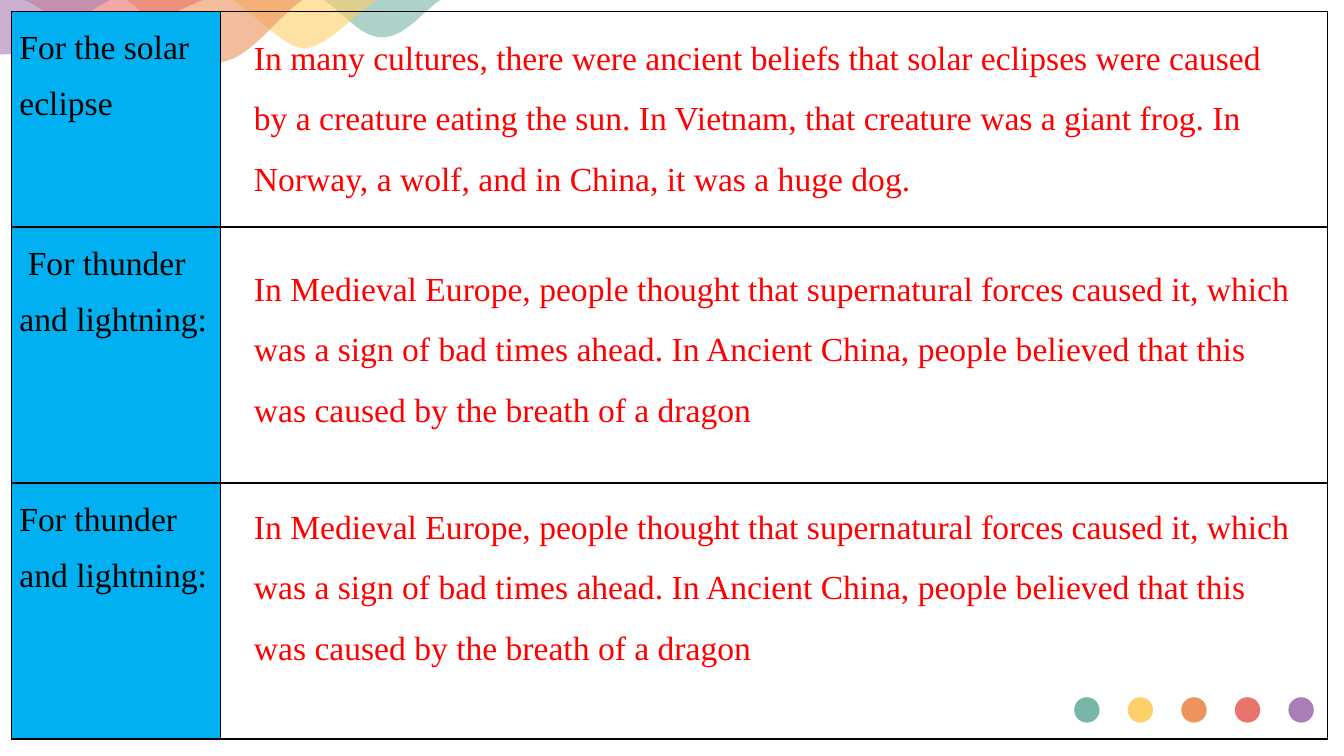
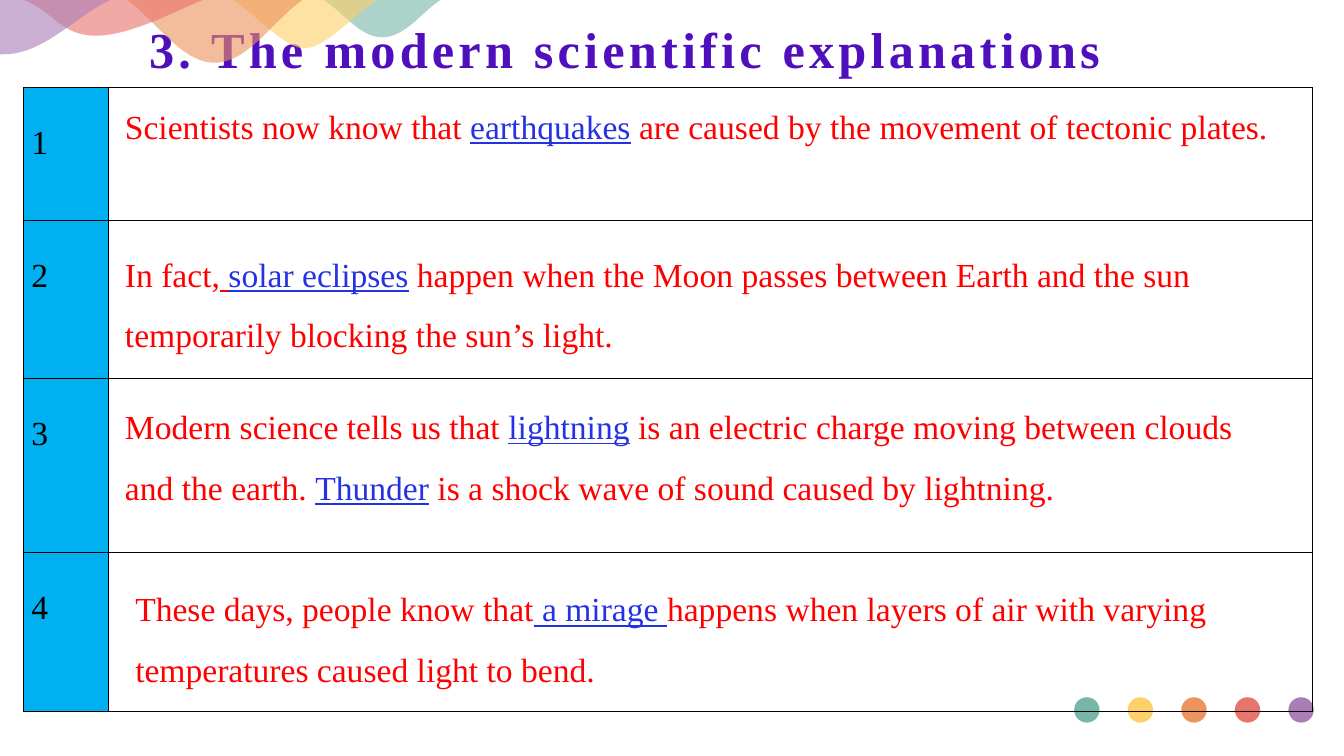
from dataclasses import dataclass

from lxml import etree
from pptx import Presentation
from pptx.dml.color import RGBColor
from pptx.enum.shapes import MSO_SHAPE as Preset
from pptx.enum.text import MSO_ANCHOR as Anchor
from pptx.oxml.ns import qn
from pptx.util import Cm, Pt

TEAL = RGBColor(0x78, 0xB6, 0xA9)
YELLOW = RGBColor(0xFD, 0xD0, 0x69)
ORANGE = RGBColor(0xED, 0x93, 0x5C)
CORAL = RGBColor(0xE9, 0x74, 0x6E)
PURPLE = RGBColor(0xAB, 0x7D, 0xB6)
SKY = RGBColor(0x00, 0xB0, 0xF0)
BLACK = RGBColor(0x00, 0x00, 0x00)
RED = RGBColor(0xFF, 0x00, 0x00)
TERM_BLUE = RGBColor(0x24, 0x32, 0xE4)
TITLE_VIOLET = RGBColor(0x4F, 0x0F, 0xBD)
BORDER = RGBColor(0x08, 0x00, 0x00)

FONT = "Times New Roman"
PALETTE = (TEAL, YELLOW, ORANGE, CORAL, PURPLE)
# Each wave: depth, then x of its anchors and handles from right to left, in cm.
WAVES = (
    (0.94, (11.1, 10.62, 10.21, 9.63, 9.07, 8.66, 8.15)),
    (1.22, (9.5, 8.89, 8.18, 7.67, 7.19, 6.48, 5.87)),
    (1.58, (7.62, 6.88, 6.25, 5.41, 4.57, 3.94, 3.2)),
    (0.9, (5.11, 4.37, 3.28, 2.41, 1.55, 1.35, 0.61)),
    (1.37, (2.77, 1.85, 1.09, 0.08, -0.97, -1.73, -2.64)),
)

BELIEF_LABELS = ("For the solar eclipse", " For thunder and lightning:",
                 "For thunder and lightning:")
ECLIPSE_BELIEF = (
    "In many cultures, there were ancient beliefs that solar eclipses were "
    "caused by a creature eating the sun. In Vietnam, that creature was a "
    "giant frog. In Norway, a wolf, and in China, it was a huge dog.")
THUNDER_BELIEF = (
    "In Medieval Europe, people thought that supernatural forces caused it, "
    "which was a sign of bad times ahead. In Ancient China, people believed "
    "that this was caused by the breath of a dragon")


@dataclass
class Term:
    """An underlined stretch of text."""
    text: str
    color: RGBColor = TERM_BLUE


# Left, top, width, height in cm, line spacing, and the pieces of the text.
BELIEFS = (
    (6.15, 0.29, 26.29, 4.88, 1.5, [ECLIPSE_BELIEF]),
    (6.15, 6.11, 26.95, 4.88, 1.5, [THUNDER_BELIEF]),
    (6.15, 12.11, 26.95, 4.88, 1.5, [THUNDER_BELIEF]),
)
EXPLANATIONS = (
    (2.9, 2.54, 29.57, 1.27, 1.0, [
        "Scientists now know that ", Term("earthquakes"),
        " are caused by the movement of tectonic plates."]),
    (2.9, 5.76, 29.39, 3.33, 1.5, [
        "In fact,", Term(" ", RED), Term("solar eclipses"),
        " happen when the Moon passes between Earth and the sun "
        "temporarily blocking the sun’s light."]),
    (2.9, 9.6, 28.96, 3.33, 1.5, [
        "Modern science tells us that ", Term("lightning"),
        " is an electric charge moving between clouds and the earth. ",
        Term("Thunder"), " is a shock wave of sound caused by lightning."]),
    (3.16, 14.19, 29.03, 3.33, 1.5, [
        "These days, people know that", Term(" a mirage "),
        "happens when layers of air with varying temperatures caused light "
        "to bend."]),
)


def set_font(font, color, size=24, bold=False):
    font.name = FONT
    font.size = Pt(size)
    font.bold = bold
    font.color.rgb = color


def paint(shape, color):
    shape.shadow.inherit = False
    shape.fill.solid()
    shape.fill.fore_color.rgb = color
    shape.line.fill.background()


def round_off(shape):
    """Turn each three straight segments into one cubic curve."""
    segments = list(shape._element.iter(qn("a:lnTo")))
    for first, second, third in zip(*[iter(segments)] * 3):
        first.tag = qn("a:cubicBezTo")
        for segment in (second, third):
            first.append(segment[0])
            segment.getparent().remove(segment)


def add_wave(slide, depth, xs, color):
    ys = (0, depth / 3, depth, depth, depth, depth / 3, 0)
    points = [(Cm(x), Cm(y)) for x, y in zip(xs, ys)]
    outline = slide.shapes.build_freeform(*points[0])
    outline.add_line_segments(points[1:], close=False)
    wave = outline.convert_to_shape()
    round_off(wave)
    paint(wave, color)
    tint = wave._element.spPr.find(qn("a:solidFill"))[0]
    etree.SubElement(tint, qn("a:alpha"), val="61000")


def add_decoration(slide):
    """Row of dots at the bottom right and waves at the top left."""
    for index, color in enumerate(PALETTE):
        dot = slide.shapes.add_shape(Preset.OVAL, Cm(27.07 + 1.35 * index),
                                     Cm(17.57), Cm(0.64), Cm(0.64))
        paint(dot, color)
    for (depth, xs), color in zip(WAVES, PALETTE):
        add_wave(slide, depth, xs, color)


def add_borders(cell):
    properties = cell._tc.get_or_add_tcPr()
    for side in ("a:lnL", "a:lnR", "a:lnT", "a:lnB"):
        line = etree.SubElement(properties, qn(side), w=str(Pt(1)))
        fill = etree.SubElement(line, qn("a:solidFill"))
        etree.SubElement(fill, qn("a:srgbClr"), val=str(BORDER))


def add_label_table(slide, left, top, widths, heights, labels,
                    label_top=0.0, spacing=1.0):
    """Two-column grid with labels on blue and an open right column."""
    table = slide.shapes.add_table(
        len(heights), len(widths), Cm(left), Cm(top),
        Cm(sum(widths)), Cm(sum(heights))).table
    table.first_row = table.horz_banding = False
    for column, width in zip(table.columns, widths):
        column.width = Cm(width)
    for row, height, label in zip(table.rows, heights, labels):
        row.height = Cm(height)
        label_cell, open_cell = row.cells
        for cell in (label_cell, open_cell):
            add_borders(cell)
        open_cell.fill.background()
        label_cell.fill.solid()
        label_cell.fill.fore_color.rgb = SKY
        label_cell.margin_left = label_cell.margin_right = Cm(0.19)
        label_cell.margin_top = Cm(label_top)
        label_cell.margin_bottom = 0
        label_cell.text = label
        paragraph = label_cell.text_frame.paragraphs[0]
        paragraph.line_spacing = spacing
        set_font(paragraph.font, BLACK)


def add_text_frame(slide, left, top, width, height):
    frame = slide.shapes.add_textbox(Cm(left), Cm(top), Cm(width),
                                     Cm(height)).text_frame
    frame.word_wrap = True
    return frame


def add_statement(slide, left, top, width, height, spacing, pieces):
    frame = add_text_frame(slide, left, top, width, height)
    paragraph = frame.paragraphs[0]
    paragraph.line_spacing = spacing
    set_font(paragraph.font, RED)
    for piece in pieces:
        run = paragraph.add_run()
        if isinstance(piece, Term):
            run.text = piece.text
            run.font.underline = True
            run.font.color.rgb = piece.color
        else:
            run.text = piece


def add_title(slide, text):
    frame = add_text_frame(slide, 3.51, 0.25, 25.96, 1.96)
    frame.vertical_anchor = Anchor.MIDDLE
    paragraph = frame.paragraphs[0]
    set_font(paragraph.font, TITLE_VIOLET, 36, True)
    run = paragraph.add_run()
    run.text = text
    run._r.get_or_add_rPr().set("spc", "300")


def build_beliefs(slide):
    add_decoration(slide)
    add_label_table(slide, 0.3, 0.28, (5.25, 27.9), (5.44, 6.45, 6.45),
                    BELIEF_LABELS, spacing=1.5)
    for statement in BELIEFS:
        add_statement(slide, *statement)


def build_explanations(slide):
    add_title(slide, "3. The modern scientific explanations")
    add_decoration(slide)
    add_label_table(slide, 0.6, 2.21, (2.13, 30.35), (3.34, 3.99, 4.39, 3.99),
                    "1234", label_top=0.93)
    for statement in EXPLANATIONS:
        add_statement(slide, *statement)


def main():
    deck = Presentation()
    deck.slide_width, deck.slide_height = Cm(33.87), Cm(19.05)
    blank = deck.slide_layouts[6]
    for build in (build_beliefs, build_explanations):
        build(deck.slides.add_slide(blank))
    deck.save("out.pptx")


if __name__ == "__main__":
    main()
